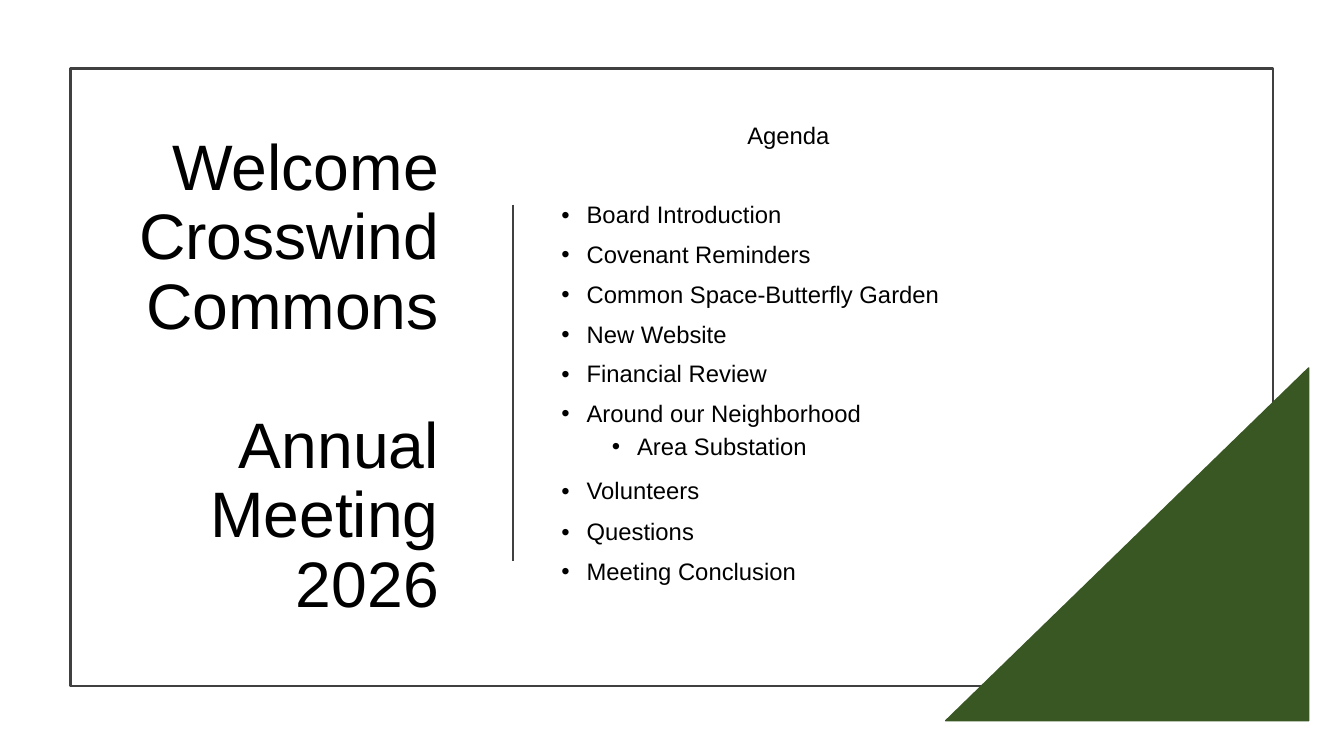
from lxml import etree
from pptx import Presentation
from pptx.dml.color import RGBColor
from pptx.enum.shapes import MSO_CONNECTOR, MSO_SHAPE
from pptx.enum.text import MSO_ANCHOR, PP_ALIGN
from pptx.oxml.ns import qn
from pptx.util import Inches, Pt

RECTANGLE = MSO_SHAPE.RECTANGLE
RIGHT_TRIANGLE = MSO_SHAPE.RIGHT_TRIANGLE
STRAIGHT = MSO_CONNECTOR.STRAIGHT
TOP, MIDDLE = MSO_ANCHOR.TOP, MSO_ANCHOR.MIDDLE
CENTER, LEFT, RIGHT = PP_ALIGN.CENTER, PP_ALIGN.LEFT, PP_ALIGN.RIGHT

FONT = "Arial"
BLACK, GRAY, GREEN = "000000", "404040", "385723"
LINE_SPACING = 0.9
TITLE_SIZE, AGENDA_SIZE = 45.9, 17

TITLE_BLOCKS = [(["Welcome", "Crosswind Commons"], 0), (["Annual Meeting 2026"], 49.6)]
AGENDA_ITEMS = [
    ("Board Introduction", 0, 38.4),
    ("Covenant Reminders", 0, 10),
    ("Common Space-Butterfly Garden", 0, 10),
    ("New Website", 0, 10),
    ("Financial Review", 0, 10),
    ("Around our Neighborhood", 0, 10),
    ("Area Substation", 1, 5),
    ("Volunteers", 0, 13.5),
    ("Questions", 0, 11),
    ("Meeting Conclusion", 0, 10),
]


def color(value):
    return RGBColor.from_string(value)


def add_text_frame(slide, box, anchor):
    text_box = slide.shapes.add_textbox(*map(Inches, box))
    frame = text_box.text_frame
    frame.word_wrap = True
    frame.vertical_anchor = anchor
    return frame


def add_paragraph(frame, first, alignment, space_before):
    paragraph = frame.paragraphs[0] if first else frame.add_paragraph()
    paragraph.alignment = alignment
    paragraph.line_spacing = LINE_SPACING
    paragraph.space_before = Pt(space_before)
    return paragraph


def add_run(paragraph, text, size):
    run = paragraph.add_run()
    run.text = text
    run.font.name = FONT
    run.font.size = Pt(size)
    run.font.color.rgb = color(BLACK)


def set_indent(paragraph, margin, indent, bullet=None):
    properties = paragraph._p.get_or_add_pPr()
    properties.set("marL", str(Inches(margin)))
    properties.set("indent", str(Inches(indent)))
    if bullet:
        etree.SubElement(properties, qn("a:buFont")).set("typeface", FONT)
        etree.SubElement(properties, qn("a:buChar")).set("char", bullet)


def add_frame(slide, box):
    frame = slide.shapes.add_shape(RECTANGLE, *map(Inches, box))
    frame.shadow.inherit = False
    frame.fill.background()
    frame.line.color.rgb = color(GRAY)
    frame.line.width = Pt(1.5)


def add_title(slide, box):
    frame = add_text_frame(slide, box, MIDDLE)
    for index, (lines, space_before) in enumerate(TITLE_BLOCKS):
        paragraph = add_paragraph(frame, index == 0, RIGHT, space_before)
        for number, line in enumerate(lines):
            if number:
                paragraph.add_line_break()
            add_run(paragraph, line, TITLE_SIZE)


def add_divider(slide, left, top, height):
    divider = slide.shapes.add_connector(
        STRAIGHT, Inches(left), Inches(top), Inches(left), Inches(top + height))
    divider.line.color.rgb = color(GRAY)
    divider.line.width = Pt(1.5)
    etree.SubElement(divider._element.spPr, qn("a:effectLst"))


def add_agenda(slide, box):
    frame = add_text_frame(slide, box, TOP)
    heading = add_paragraph(frame, True, CENTER, 0)
    set_indent(heading, 0.06, 0)
    add_run(heading, "Agenda", AGENDA_SIZE)
    for text, level, space_before in AGENDA_ITEMS:
        paragraph = add_paragraph(frame, False, LEFT, space_before)
        paragraph.level = level
        set_indent(paragraph, 0.38 + 0.5 * level, -0.25, "•")
        add_run(paragraph, text, AGENDA_SIZE)


def add_corner(slide, box):
    corner = slide.shapes.add_shape(RIGHT_TRIANGLE, *map(Inches, box))
    corner.rotation = 270
    corner.shadow.inherit = False
    corner.fill.solid()
    corner.fill.fore_color.rgb = color(GREEN)
    corner.line.color.rgb = color(GREEN)
    corner.line.width = Pt(1)


def main():
    presentation = Presentation()
    presentation.slide_width = Inches(13.33)
    presentation.slide_height = Inches(7.5)
    slide = presentation.slides.add_slide(presentation.slide_layouts[6])
    add_frame(slide, (0.7, 0.68, 11.93, 6.13))
    add_title(slide, (1.18, 1.3, 3.27, 4.9))
    add_divider(slide, 5.09, 2.03, 3.54)
    add_agenda(slide, (5.34, 1.18, 4.9, 5.02))
    add_corner(slide, (9.43, 3.6, 3.5, 3.6))
    presentation.save("out.pptx")


if __name__ == "__main__":
    main()
